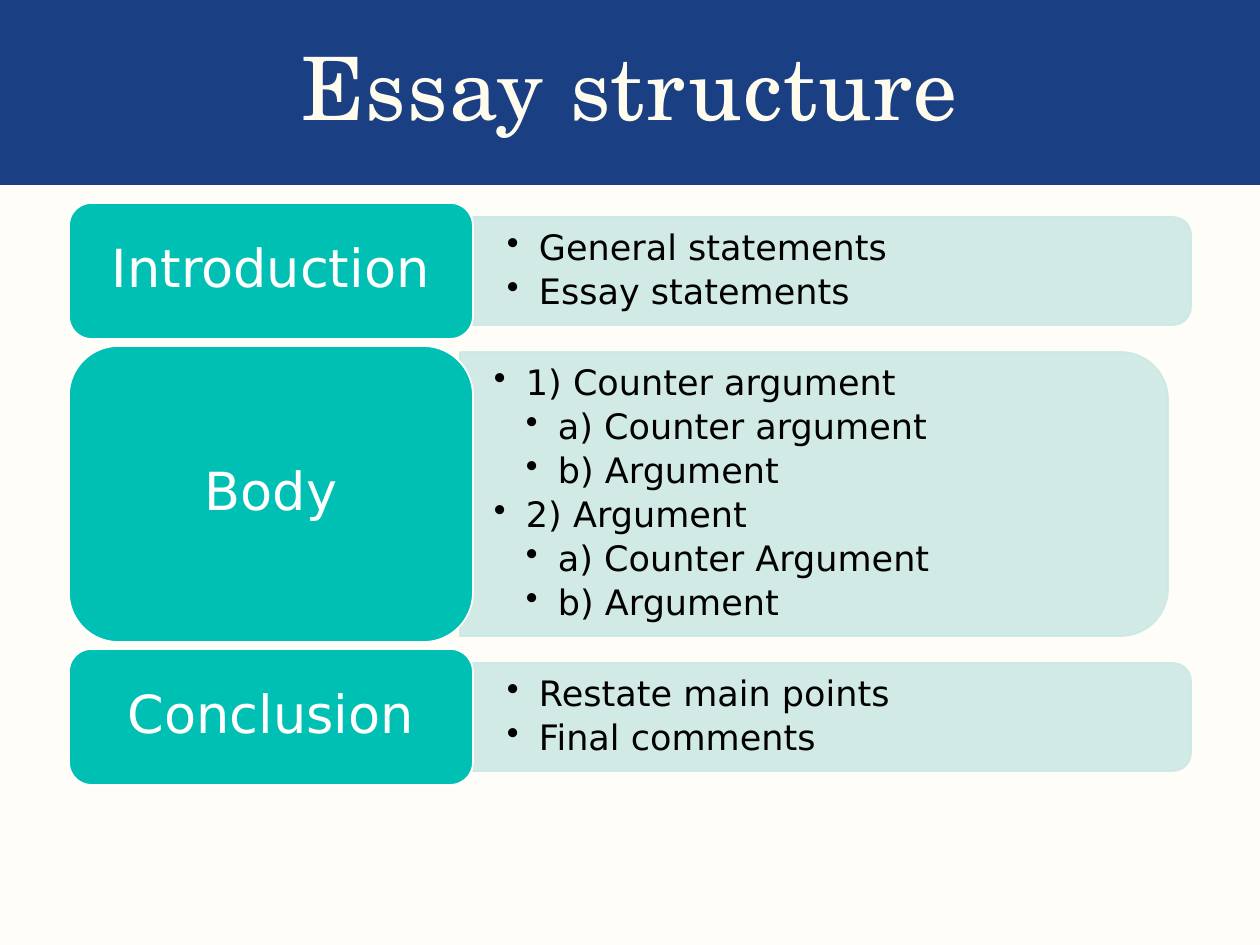
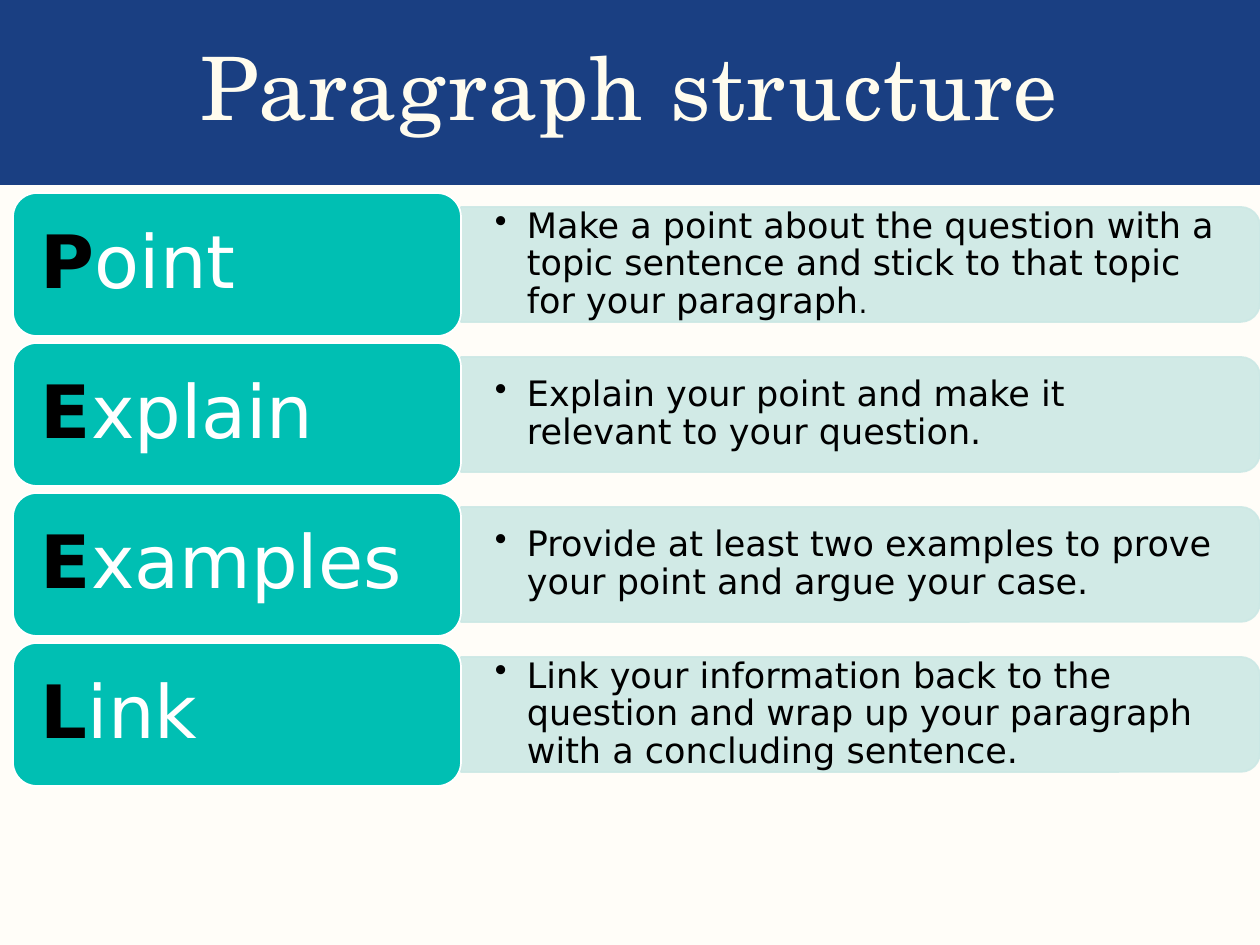
from lxml.etree import SubElement
from pptx import Presentation
from pptx.dml.color import RGBColor
from pptx.enum.shapes import MSO_SHAPE
from pptx.enum.text import MSO_ANCHOR, PP_ALIGN
from pptx.oxml.ns import qn
from pptx.util import Pt

# Shared scale, colours and fonts
EMU_PER_PX = 914400 / 126
SLIDE_W, SLIDE_H, BAND_H = 1260, 945, 185
CREAM = RGBColor(0xFF, 0xFD, 0xF8)
NAVY = RGBColor(0x1A, 0x3F, 0x82)
TITLE_CREAM = RGBColor(0xFF, 0xFC, 0xEE)
TEAL = RGBColor(0x00, 0xBF, 0xB3)
PALE_TEAL = RGBColor(0xCC, 0xE8, 0xE5)
WHITE = RGBColor(0xFF, 0xFF, 0xFF)
BLACK = RGBColor(0x00, 0x00, 0x00)
BODY_FONT, TITLE_FONT = "DejaVu Sans", "TeX Gyre Schola"
BULLET_INDENT = 32
ROW_GAP = 7

# Rows: label, label height, panel (left, width, height), bullets as (level, text)
ESSAY_PARTS = [
    ("Introduction", 136, (473, 718, 108),
     [(1, "General statements"), (1, "Essay statements")]),
    ("Body", 296, (460, 708, 284),
     [(1, "1) Counter argument"), (2, "a) Counter argument"), (2, "b) Argument"),
      (1, "2) Argument"), (2, "a) Counter Argument"), (2, "b) Argument")]),
    ("Conclusion", 136, (473, 718, 108),
     [(1, "Restate main points"), (1, "Final comments")]),
]

# Rows: label, explanation, size of the closing full stop
PEEL_STEPS = [
    ("Point", "Make a point about the question with a topic sentence "
              "and stick to that topic for your paragraph", 16),
    ("Explain", "Explain your point and make it relevant to your question", 20),
    ("Examples", "Provide at least two examples to prove your point "
                 "and argue your case", 20),
    ("Link", "Link your information back to the question and wrap up "
             "your paragraph with a concluding sentence", 20),
]


def px(length):
    return round(length * EMU_PER_PX)


def box(left, top, width, height):
    return px(left), px(top), px(width), px(height)


def write(frame, text, *, size, color, font=BODY_FONT, bold=False, align=PP_ALIGN.LEFT,
          level=0, gap=0, tracking=0, same_paragraph=False):
    """Add text to a frame, as a new paragraph unless told otherwise."""
    paragraph = frame.paragraphs[-1]
    if paragraph.runs and not same_paragraph:
        paragraph = frame.add_paragraph()
        paragraph.space_before = Pt(gap)
    if not same_paragraph:
        paragraph.alignment = align
        paragraph.line_spacing = 0.9
        if level:
            properties = paragraph._p.get_or_add_pPr()
            properties.set("marL", str(px(BULLET_INDENT * level)))
            properties.set("indent", str(-px(BULLET_INDENT)))
            SubElement(properties, qn("a:buChar"), char="•")
    run = paragraph.add_run()
    run.text = text
    run.font.name, run.font.size, run.font.bold = font, Pt(size), bold
    run.font.color.rgb = color
    if tracking:
        run._r.get_or_add_rPr().set("spc", str(tracking))


def set_frame(shape, inset_x, inset_y):
    frame = shape.text_frame
    frame.word_wrap = True
    frame.vertical_anchor = MSO_ANCHOR.MIDDLE
    frame.margin_left = frame.margin_right = px(inset_x)
    frame.margin_top = frame.margin_bottom = px(inset_y)
    return frame


def add_filled(slide, preset, place, fill, outline=None):
    shape = slide.shapes.add_shape(preset, *box(*place))
    shape.shadow.inherit = False
    shape.fill.solid()
    shape.fill.fore_color.rgb = fill
    if outline is None:
        shape.line.fill.background()
    else:
        shape.line.color.rgb = outline
        shape.line.width = Pt(1)
    return shape


def add_panel(slide, left, middle, width, height):
    """Pale panel rounded on its right side, with a text frame over it."""
    center = left + width / 2
    upright = (center - height / 2, middle - width / 2, height, width)
    panel = add_filled(slide, MSO_SHAPE.ROUND_2_SAME_RECTANGLE, upright, PALE_TEAL, PALE_TEAL)
    panel.rotation = 90
    for color in panel._element.spPr.iter(qn("a:srgbClr")):
        SubElement(color, qn("a:alpha"), val="90000")
    notes = slide.shapes.add_textbox(*box(left, middle - height / 2 + 5, width - 6, height - 10))
    return set_frame(notes, 34, 18)


def add_label(slide, left, top, width, height, inset_x, inset_y):
    label = add_filled(slide, MSO_SHAPE.ROUNDED_RECTANGLE, (left, top, width, height), TEAL, WHITE)
    return set_frame(label, inset_x, inset_y)


def add_titled_slide(prs, title):
    slide = prs.slides.add_slide(prs.slide_layouts[6])
    slide.background.fill.solid()
    slide.background.fill.fore_color.rgb = CREAM
    add_filled(slide, MSO_SHAPE.RECTANGLE, (0, 0, SLIDE_W, BAND_H), NAVY)
    heading = slide.shapes.add_textbox(*box(82, 39, 1096, 107))
    write(set_frame(heading, 0, 0), title, size=50, color=TITLE_CREAM, font=TITLE_FONT,
          align=PP_ALIGN.CENTER, tracking=80)
    return slide


def build_essay(prs):
    slide = add_titled_slide(prs, "Essay structure")
    top = 203
    for name, height, (left, width, panel_height), points in ESSAY_PARTS:
        panel = add_panel(slide, left, top + height / 2, width, panel_height)
        for level, point in points:
            write(panel, point, size=20, color=BLACK, level=level, gap=3.6)
        label = add_label(slide, 69, top, 404, height, 15, 8)
        write(label, name, size=30, color=WHITE, align=PP_ALIGN.CENTER)
        top += height + ROW_GAP


def build_paragraph(prs):
    slide = add_titled_slide(prs, "Paragraph structure")
    height = 143
    for row, (name, explanation, stop_size) in enumerate(PEEL_STEPS):
        top = 193 + row * (height + ROW_GAP)
        panel = add_panel(slide, 461, top + height / 2, 799, 115)
        write(panel, explanation, size=20, color=BLACK, level=1)
        write(panel, ".", size=stop_size, color=BLACK, same_paragraph=True)
        label = add_label(slide, 13, top, 448, height, 21, 11)
        write(label, name[0], size=42, color=BLACK, bold=True)
        write(label, name[1:], size=42, color=WHITE, same_paragraph=True)


def main():
    prs = Presentation()
    prs.slide_width, prs.slide_height = px(SLIDE_W), px(SLIDE_H)
    build_essay(prs)
    build_paragraph(prs)
    prs.save("out.pptx")


if __name__ == "__main__":
    main()
